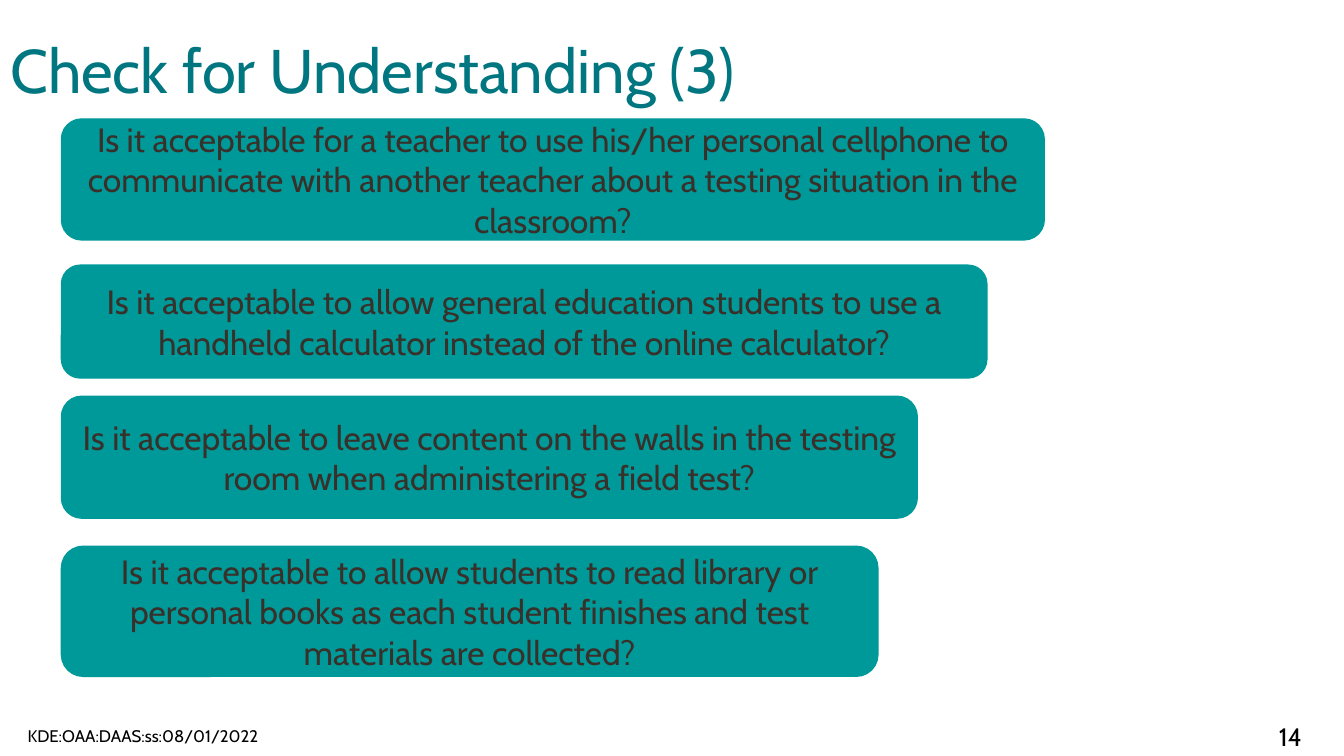
from pptx import Presentation
from pptx.dml.color import RGBColor
from pptx.enum.shapes import MSO_SHAPE
from pptx.enum.text import MSO_ANCHOR as ANCHOR, PP_ALIGN as ALIGN
from pptx.util import Pt

# Content
HEADING = "Check for Understanding (3)"
FOOTER = "KDE:OAA:DAAS:ss:08/01/2022"
PAGE_NUMBER = "14"
QUESTIONS = [  # text, top, width, height
    ("Is it acceptable for a teacher to use his/her personal cellphone to "
     "communicate with another teacher about a testing situation in the classroom?",
     85, 702, 86.4),
    ("Is it acceptable to allow general education students to use a "
     "handheld calculator instead of the online calculator?",
     189.4, 661, 80.6),
    ("Is it acceptable to leave content on the walls in the testing "
     "room when administering a field test?",
     283, 611.3, 87.1),
    ("Is it acceptable to allow students to read library or "
     "personal books as each student finishes and test materials are collected?",
     390.2, 583.2, 92.9),
]
QUESTION_LEFT = 43.9
COLORS = {"title": "007780", "card": "009999", "question": "39302A", "footer": "000000"}
FONT = "Cabin"


def color(name):
    return RGBColor.from_string(COLORS[name])


def write(holder, text, *, size, ink, align=ALIGN.LEFT, anchor=ANCHOR.MIDDLE, spacing=None):
    frame = holder.text_frame
    frame.word_wrap = True
    frame.vertical_anchor = anchor
    paragraph = frame.paragraphs[0]
    paragraph.text = text
    paragraph.alignment = align
    paragraph.line_spacing = spacing
    paragraph.font.name = FONT
    paragraph.font.size = Pt(size)
    paragraph.font.color.rgb = color(ink)


deck = Presentation()
deck.slide_width, deck.slide_height = Pt(960), Pt(540)
slide = deck.slides.add_slide(deck.slide_layouts[5])
shapes = slide.shapes

# Title
heading = shapes.title
heading.left, heading.top, heading.width, heading.height = Pt(0), Pt(0), Pt(828), Pt(104.4)
write(heading, HEADING, size=44, ink="title", spacing=0.9)

# Question cards
for question, top, width, height in QUESTIONS:
    card = shapes.add_shape(MSO_SHAPE.ROUNDED_RECTANGLE,
                            Pt(QUESTION_LEFT), Pt(top), Pt(width), Pt(height))
    card.shadow.inherit = False
    card.fill.solid()
    card.fill.fore_color.rgb = color("card")
    card.line.color.rgb = color("card")
    card.line.width = Pt(1)
    write(card, question, size=24, ink="question", align=ALIGN.CENTER)

# Footer and page number
footer = shapes.add_textbox(Pt(0), Pt(511.2), Pt(204.5), Pt(28.8))
write(footer, FOOTER, size=12, ink="footer", align=ALIGN.CENTER)
page_number = shapes.add_textbox(Pt(906.5), Pt(511.9), Pt(54), Pt(28.8))
write(page_number, PAGE_NUMBER, size=18, ink="footer", anchor=ANCHOR.TOP)

deck.save("out.pptx")
